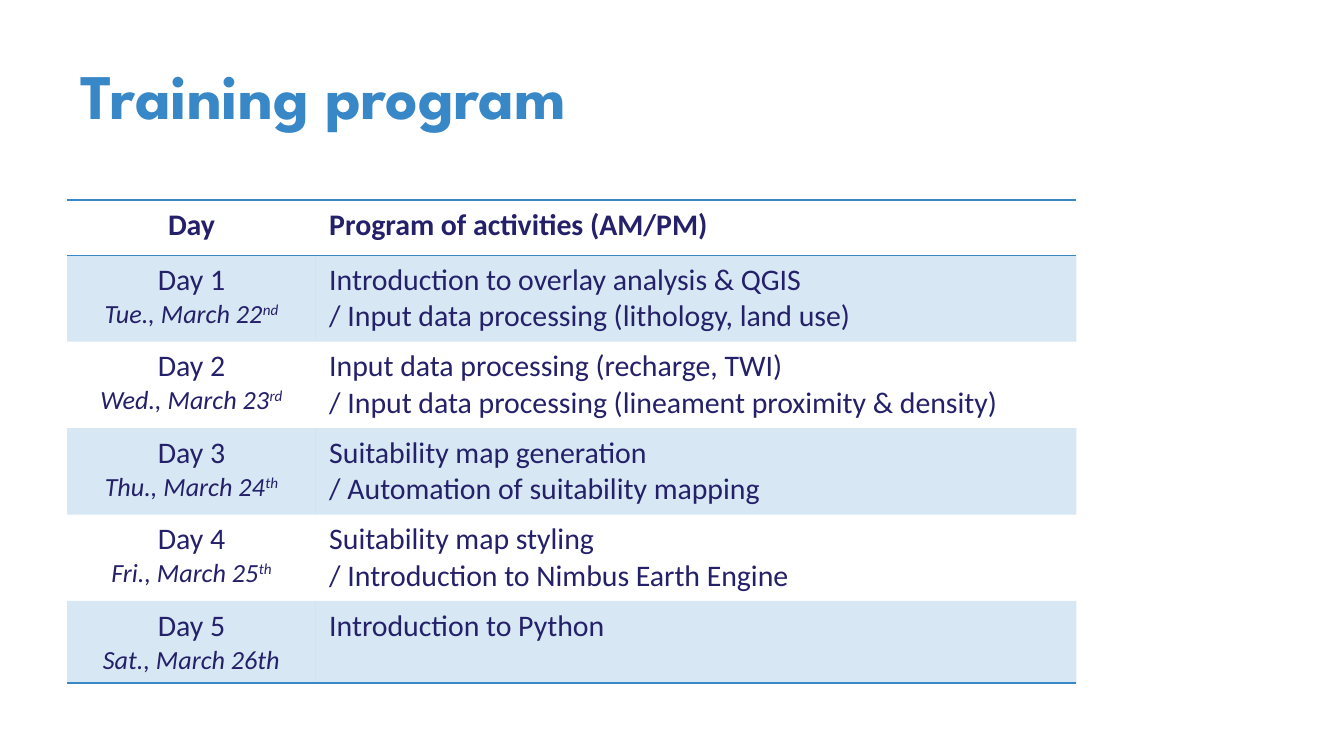
"""Build the training program slide with its five-day schedule table."""
import pptx
import pptx.dml.color
import pptx.enum.text
import pptx.oxml
import pptx.oxml.ns
import pptx.util
from lxml import etree

Pt = pptx.util.Pt
qn = pptx.oxml.ns.qn

TITLE = "Training program"
HEADER = ("Day", "Program of activities (AM/PM)")
DAYS = [
    ("Day 1", "Tue., March 22", "nd",
     ["Introduction to overlay analysis & QGIS",
      "/ Input data processing (lithology, land use)"]),
    ("Day 2", "Wed., March 23", "rd",
     ["Input data processing (recharge, TWI)",
      "/ Input data processing (lineament proximity & density)"]),
    ("Day 3", "Thu., March 24", "th",
     ["Suitability map generation", "/ Automation of suitability mapping"]),
    ("Day 4", "Fri., March 25", "th",
     ["Suitability map styling", "/ Introduction to Nimbus Earth Engine"]),
    ("Day 5", "Sat., March 26th", "", ["Introduction to Python"]),
]
BLUE, NAVY = "3887C7", "242069"
LEFT, TABLE_TOP = 36, 107.3
COLUMN_WIDTHS = (133.2, 407.5)
ROW_HEIGHTS = [29.5] + [46.3] * 4 + [44]
NO_STYLE = "{2D5ABB26-0587-4C30-8999-92F81FD0307C}"


def color(value):
    return pptx.dml.color.RGBColor.from_string(value)


def add_text(para, text, size=16, font="Calibri", fill=NAVY,
             bold=False, italic=False, raised=False):
    span = para.add_run()
    span.text = text
    span.font.size = Pt(size)
    span.font.name = font
    span.font.bold = bold
    span.font.italic = italic
    span.font.color.rgb = color(fill)
    if raised:
        span.font._element.set("baseline", "30000")


def fill_cell(cell, lines, centered=False):
    for index, spans in enumerate(lines):
        frame = cell.text_frame
        para = frame.add_paragraph() if index else frame.paragraphs[0]
        if centered:
            para.alignment = pptx.enum.text.PP_ALIGN.CENTER
        for text, style in spans:
            add_text(para, text, **style)


def shade(cell, banded):
    if not banded:
        cell.fill.background()
        return
    cell.fill.solid()
    cell.fill.fore_color.rgb = color(BLUE)
    tint = cell._tc.tcPr.find(".//" + qn("a:srgbClr"))
    etree.SubElement(tint, qn("a:alpha"), val="20000")


def add_borders(cell, sides):
    for index, side in enumerate(sides):
        line = etree.Element(qn("a:ln" + side), w=str(Pt(1)))
        solid = etree.SubElement(line, qn("a:solidFill"))
        etree.SubElement(solid, qn("a:srgbClr"), val=BLUE)
        cell._tc.tcPr.insert(index, line)


def add_title(page):
    box = page.shapes.add_textbox(Pt(LEFT), Pt(16.6), Pt(533.5), Pt(67.7))
    box.text_frame.word_wrap = True
    box.text_frame.vertical_anchor = pptx.enum.text.MSO_ANCHOR.MIDDLE
    add_text(box.text_frame.paragraphs[0], TITLE,
             size=34, font="League Spartan", fill=BLUE, bold=True)


def add_schedule(page):
    rows = [[[[(text, {"bold": True})]] for text in HEADER]]
    for day, date, suffix, activities in DAYS:
        small = {"size": 14, "italic": True}
        date_spans = [(date, small)]
        if suffix:
            date_spans.append((suffix, {**small, "raised": True}))
        rows.append([[[(day, {})], date_spans],
                     [[(activity, {})] for activity in activities]])

    table = page.shapes.add_table(
        len(rows), len(COLUMN_WIDTHS), Pt(LEFT), Pt(TABLE_TOP),
        Pt(sum(COLUMN_WIDTHS)), Pt(sum(ROW_HEIGHTS))).table
    table._tbl.tblPr.find(qn("a:tableStyleId")).text = NO_STYLE
    table.horz_banding = False
    for column, width in zip(table.columns, COLUMN_WIDTHS):
        column.width = Pt(width)
    borders = {0: "TB", len(rows) - 1: "B"}
    for row_index, row in enumerate(rows):
        table.rows[row_index].height = Pt(ROW_HEIGHTS[row_index])
        for column_index, lines in enumerate(row):
            cell = table.cell(row_index, column_index)
            fill_cell(cell, lines, centered=column_index == 0)
            shade(cell, banded=row_index % 2 == 1)
            add_borders(cell, borders.get(row_index, ""))


def main():
    deck = pptx.Presentation()
    deck.slide_width, deck.slide_height = Pt(720), Pt(405)
    page = deck.slides.add_slide(deck.slide_layouts[6])
    add_title(page)
    add_schedule(page)
    deck.save("out.pptx")


if __name__ == "__main__":
    main()
